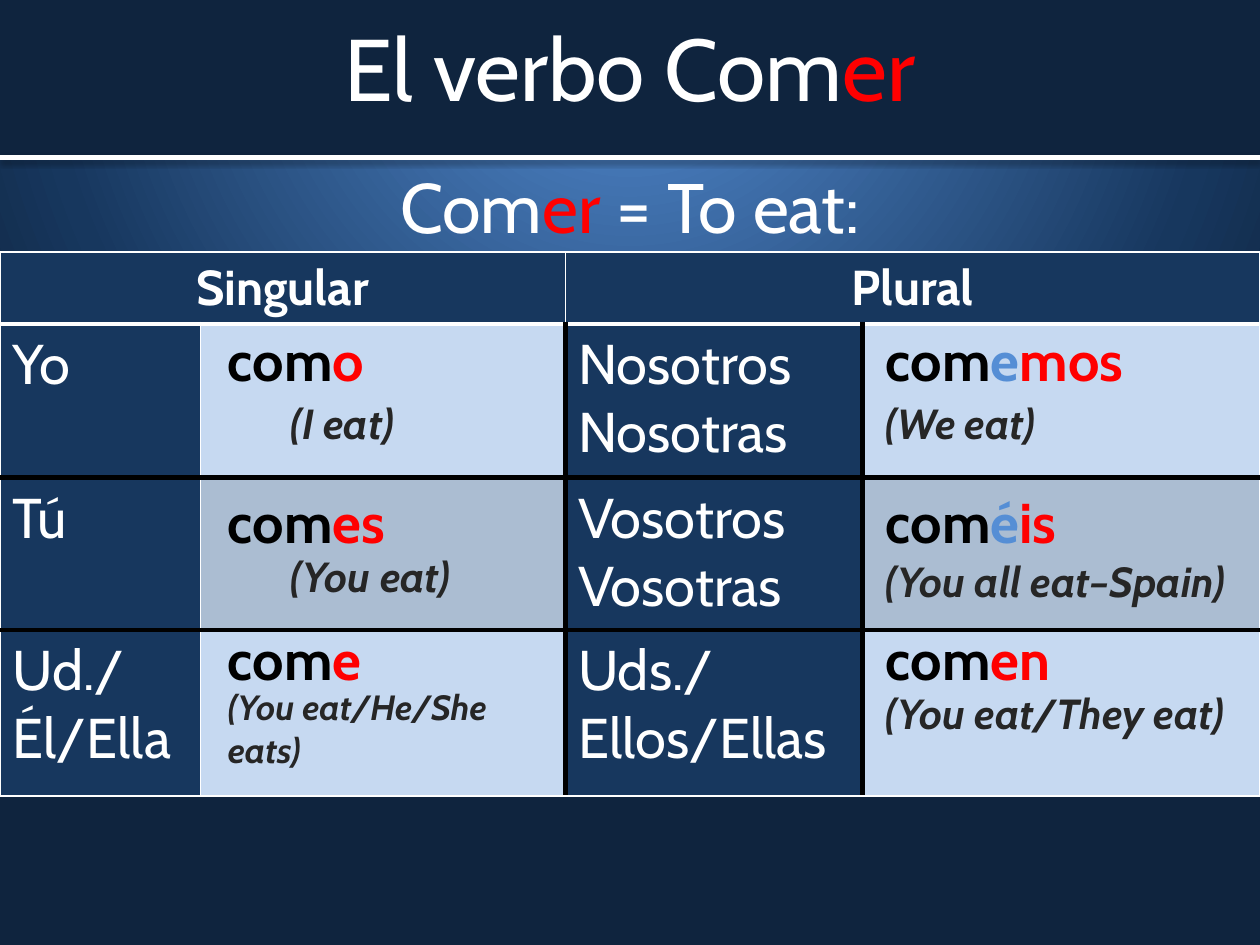
from pptx import Presentation
from pptx.dml.color import RGBColor
from pptx.enum import shapes, text
from pptx.oxml import parse_xml
from pptx.oxml.ns import nsdecls, qn
from pptx.util import Cm, Pt

COLORS = {
    "white": "FFFFFF", "black": "000000", "red": "FF0000", "blue": "558ED5",
    "navy": "17375E", "night": "0F243E", "pale": "C6D9F1", "steel": "ABBDD2",
    "gray": "262626",
}
NO_STYLE = "{2D5ABB26-0587-4C30-8999-92F81FD0307C}"


def write(paragraph, parts, size, bold=False, italic=False):
    """Fill a paragraph with (wording, color) parts in one type style."""
    for wording, color in parts:
        run = paragraph.add_run()
        run.text = wording
        run.font.name = "Cabin"
        run.font.size = Pt(size)
        run.font.bold = bold
        run.font.italic = italic
        run.font.color.rgb = RGBColor.from_string(COLORS[color])


def add_plain_table(rows, cols, left, top, width, height):
    """Add a table without style, header row or banding."""
    frame = slide.shapes.add_table(rows, cols, Cm(left), Cm(top), Cm(width), Cm(height))
    frame.table.first_row = False
    frame.table.horz_banding = False
    for style in frame.element.iter(qn("a:tableStyleId")):
        style.text = NO_STYLE
    return frame.table


prs = Presentation()
prs.slide_width, prs.slide_height = Cm(25.4), Cm(19.05)
slide = prs.slides.add_slide(prs.slide_layouts[5])

# Background: radial gradient centred above the slide
stops = "".join(
    f'<a:gs pos="{position * 1000}"><a:srgbClr val="{COLORS[color]}"/></a:gs>'
    for position, color in ((0, "blue"), (75, "navy"), (100, "night")))
slide.element.cSld.insert(0, parse_xml(
    f'<p:bg {nsdecls("p", "a")}><p:bgPr><a:gradFill rotWithShape="1"><a:gsLst>{stops}</a:gsLst>'
    '<a:path path="circle"><a:fillToRect l="50000" t="-80000" r="50000" b="180000"/></a:path>'
    '</a:gradFill><a:effectLst/></p:bgPr></p:bg>'))

# Title band, placed behind the title
band = slide.shapes.add_shape(shapes.MSO_SHAPE.RECTANGLE, 0, 0, Cm(25.4), Cm(3.18))
band.shadow.inherit = False
band.fill.solid()
band.fill.fore_color.rgb = RGBColor.from_string(COLORS["night"])
band.line.fill.background()
slide.shapes.element.insert(2, band.element)

title = slide.shapes.title
title.left, title.top, title.width, title.height = 0, 0, Cm(25.4), Cm(2.69)
title.text_frame.auto_size = text.MSO_AUTO_SIZE.NONE
title.text_frame.vertical_anchor = text.MSO_ANCHOR.MIDDLE
title.text_frame.paragraphs[0].alignment = text.PP_ALIGN.CENTER
write(title.text_frame.paragraphs[0], [("El verbo Com", "white"), ("er", "red")], 50)

meaning = slide.shapes.add_textbox(0, Cm(3.18), Cm(25.4), Cm(13.21)).text_frame
meaning.word_wrap = True
meaning.paragraphs[0].alignment = text.PP_ALIGN.CENTER
write(meaning.paragraphs[0],
      [("Com", "white"), ("er", "red"), (" = To eat:", "white")], 40)

rule = slide.shapes.add_connector(
    shapes.MSO_CONNECTOR.STRAIGHT, 0, Cm(3.18), Cm(25.4), Cm(3.18))
rule.line.color.rgb = RGBColor.from_string(COLORS["white"])
rule.line.width = Pt(3)
rule.element.spPr.append(parse_xml(
    f'<a:effectLst {nsdecls("a")}><a:outerShdw blurRad="{Pt(3.1)}" dist="{Pt(1.6)}" dir="5400000">'
    '<a:srgbClr val="000000"><a:alpha val="38000"/></a:srgbClr></a:outerShdw></a:effectLst>'))

# Conjugation grid: pronoun columns with room for the verb forms
grid_text = [
    ["Singular", "", "Plural", ""],
    ["Yo", "", "Nosotros\nNosotras", ""],
    ["Tú", "", "Vosotros\nVosotras", ""],
    ["Ud./Él/Ella", "", "Uds./Ellos/Ellas", ""],
]
grid = add_plain_table(4, 4, 0, 5.08, 25.4, 10.97)
for column, width in zip(grid.columns, (4.04, 7.36, 5.99, 8.01)):
    column.width = Cm(width)
for row, height in zip(grid.rows, (1.45, 3.1, 3.07, 3.35)):
    row.height = Cm(height)

thin, thick, heavy = ("white", 1), ("white", 3), ("black", 3)
across = [thin, thick, heavy, heavy, thin]
header_down = [thin] * 5
body_down = [thin, thin, heavy, heavy, thin]
for r, row_text in enumerate(grid_text):
    down = body_down if r else header_down
    for c, wording in enumerate(row_text):
        cell = grid.cell(r, c)
        properties = cell._tc.get_or_add_tcPr()
        edges = {"L": down[c], "R": down[c + 1], "T": across[r], "B": across[r + 1]}
        for side, (color, points) in edges.items():
            properties.append(parse_xml(
                f'<a:ln{side} {nsdecls("a")} w="{Pt(points)}"><a:solidFill>'
                f'<a:srgbClr val="{COLORS[color]}"/></a:solidFill></a:ln{side}>'))
        verb_fill = "steel" if r == 2 else "pale"
        cell.fill.solid()
        cell.fill.fore_color.rgb = RGBColor.from_string(
            COLORS[verb_fill if r and c % 2 else "navy"])
        cell.text_frame.text = wording
        for paragraph in cell.text_frame.paragraphs:
            paragraph.alignment = text.PP_ALIGN.LEFT if r else text.PP_ALIGN.CENTER
            for run in paragraph.runs:
                run.font.name = "Cabin"
                run.font.size = Pt(32 if r else 28)
                run.font.bold = r == 0
                run.font.color.rgb = RGBColor.from_string(COLORS["white"])
for c in (0, 2):
    grid.cell(0, c).merge(grid.cell(0, c + 1))

# Verb forms: left, top, width, height, stem and endings
singular, plural = 4.34, 17.6
stem = ("com", "black")
forms = [
    (singular, 6.48, 6.25, 1.6, [stem, ("o", "red")]),
    (singular, 9.73, 5.94, 1.6, [stem, ("es", "red")]),
    (singular, 12.5, 6.25, 1.7, [stem, ("e", "red")]),
    (plural, 6.48, 7.16, 1.73, [stem, ("e", "blue"), ("mos", "red")]),
    (plural, 9.73, 6.4, 1.6, [stem, ("é", "blue"), ("is", "red")]),
    (plural, 12.5, 6.1, 1.6, [stem, ("en", "red")]),
]
for left, top, width, height, parts in forms:
    form = add_plain_table(1, 1, left, top, width, height)
    write(form.cell(0, 0).text_frame.paragraphs[0], parts, 32, bold=True)

# English meanings: left, top, width, height, size, wording
translations = [
    (5.61, 7.92, 4.47, 1.27, 24, "(I eat)"),
    (5.61, 11, 5.44, 1.27, 24, "(You eat)"),
    (singular, 13.72, 6.71, 1.96, 20, "(You eat/He/She eats)"),
    (plural, 7.92, 5.44, 1.27, 24, "(We eat)"),
    (plural, 11.1, 7.42, 1.27, 24, "(You all eat–Spain)"),
    (plural, 13.77, 7.42, 1.27, 24, "(You eat/They eat)"),
]
for left, top, width, height, size, wording in translations:
    translation = add_plain_table(1, 1, left, top, width, height)
    write(translation.cell(0, 0).text_frame.paragraphs[0], [(wording, "gray")],
          size, bold=True, italic=True)

prs.save("out.pptx")
